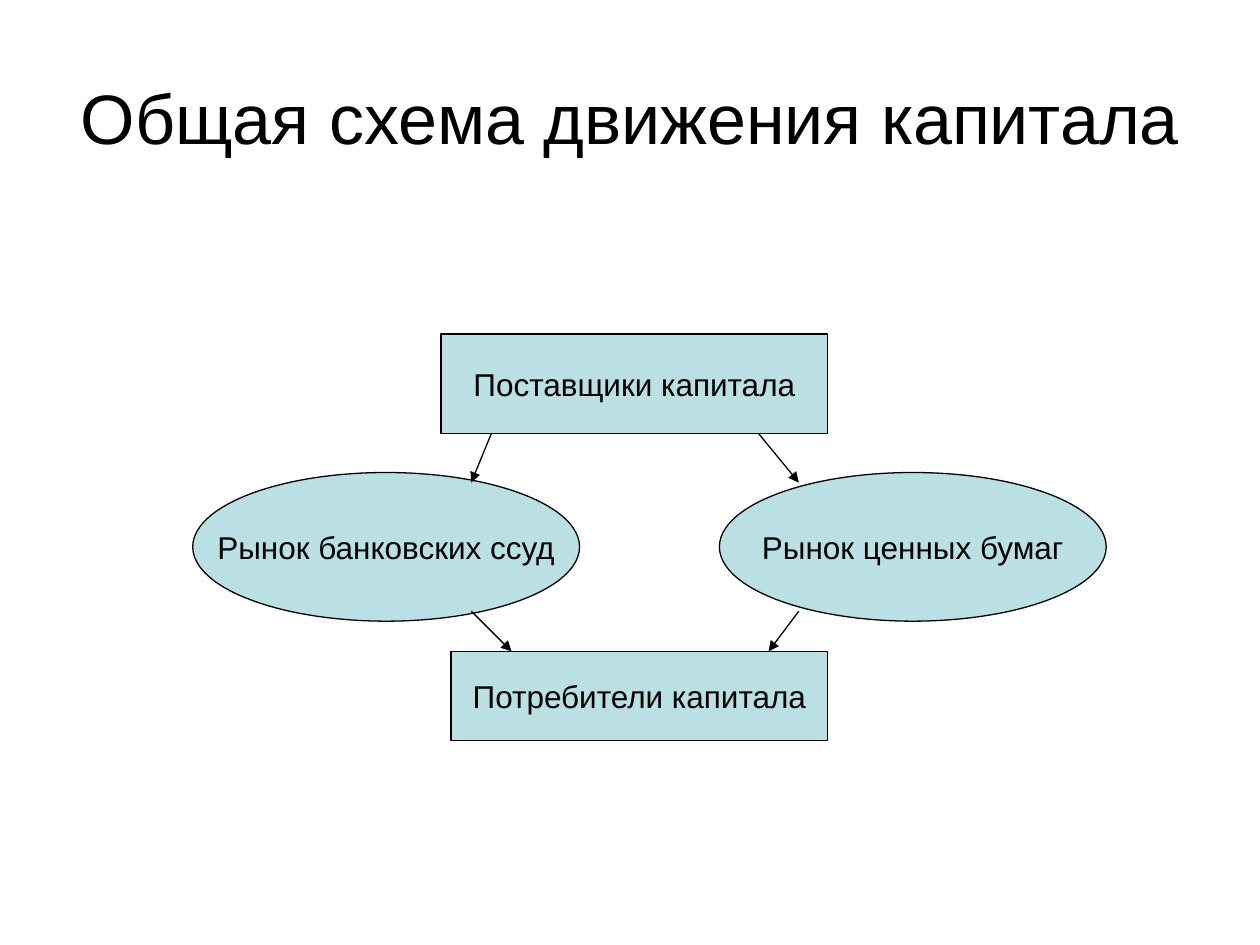
import pptx
import pptx.dml.color
import pptx.enum.shapes
import pptx.enum.text
import pptx.oxml
import pptx.util
from pptx.util import Inches

SHAPE = pptx.enum.shapes.MSO_SHAPE


def color(value):
    return pptx.dml.color.RGBColor.from_string(value)


def write_text(box, text, *, size, font, ink, wrap):
    frame = box.text_frame
    frame.word_wrap = wrap
    frame.vertical_anchor = pptx.enum.text.MSO_ANCHOR.MIDDLE
    para = frame.paragraphs[0]
    para.alignment = pptx.enum.text.PP_ALIGN.CENTER
    span = para.add_run()
    span.text = text
    span.font.size = pptx.util.Pt(size)
    span.font.name = font
    span.font.color.rgb = color(ink)


class Diagram:
    font = "Arial"
    ink = "000000"
    fill = "BBE0E3"
    line_width = 0.75

    def __init__(self, page):
        self.page = page

    def outline(self, line):
        line.color.rgb = color(self.ink)
        line.width = pptx.util.Pt(self.line_width)

    def title(self, text, left, top, width, height):
        box = self.page.shapes.add_textbox(
            Inches(left), Inches(top), Inches(width), Inches(height))
        write_text(box, text, size=40, font=self.font, ink=self.ink, wrap=True)

    def node(self, kind, text, left, top, width, height):
        box = self.page.shapes.add_shape(
            kind, Inches(left), Inches(top), Inches(width), Inches(height))
        box.shadow.inherit = False
        box.fill.solid()
        box.fill.fore_color.rgb = color(self.fill)
        self.outline(box.line)
        write_text(box, text, size=18, font=self.font, ink=self.ink, wrap=False)

    def arrow(self, start, end):
        connector = self.page.shapes.add_connector(
            pptx.enum.shapes.MSO_CONNECTOR.STRAIGHT,
            *(Inches(value) for value in (*start, *end)))
        self.outline(connector.line)
        head = pptx.oxml.ns.qn("a:tailEnd")
        line = connector.line._get_or_add_ln()
        line.append(line.makeelement(head, {"type": "triangle"}))
        properties = connector._element.spPr
        properties.append(properties.makeelement(pptx.oxml.ns.qn("a:effectLst"), {}))


def main():
    deck = pptx.Presentation()
    deck.slide_width = Inches(10)
    deck.slide_height = Inches(7.5)
    diagram = Diagram(deck.slides.add_slide(deck.slide_layouts[6]))

    diagram.title("Общая схема движения капитала", 0.5, 0.3, 9, 1.25)

    diagram.node(SHAPE.RECTANGLE, "Поставщики капитала", 3.5, 2.65, 3.07, 0.79)
    diagram.node(SHAPE.RECTANGLE, "Потребители капитала", 3.58, 5.17, 2.99, 0.71)
    for text, left in (("Рынок банковских ссуд", 1.53), ("Рынок ценных бумаг", 5.71)):
        diagram.node(SHAPE.OVAL, text, left, 3.75, 3.07, 1.18)

    for supplier_x, market_x, consumer_x in ((3.9, 3.74, 4.06), (6.02, 6.34, 6.1)):
        diagram.arrow((supplier_x, 3.44), (market_x, 3.83))
        diagram.arrow((market_x, 4.85), (consumer_x, 5.17))

    deck.save("out.pptx")


if __name__ == "__main__":
    main()
